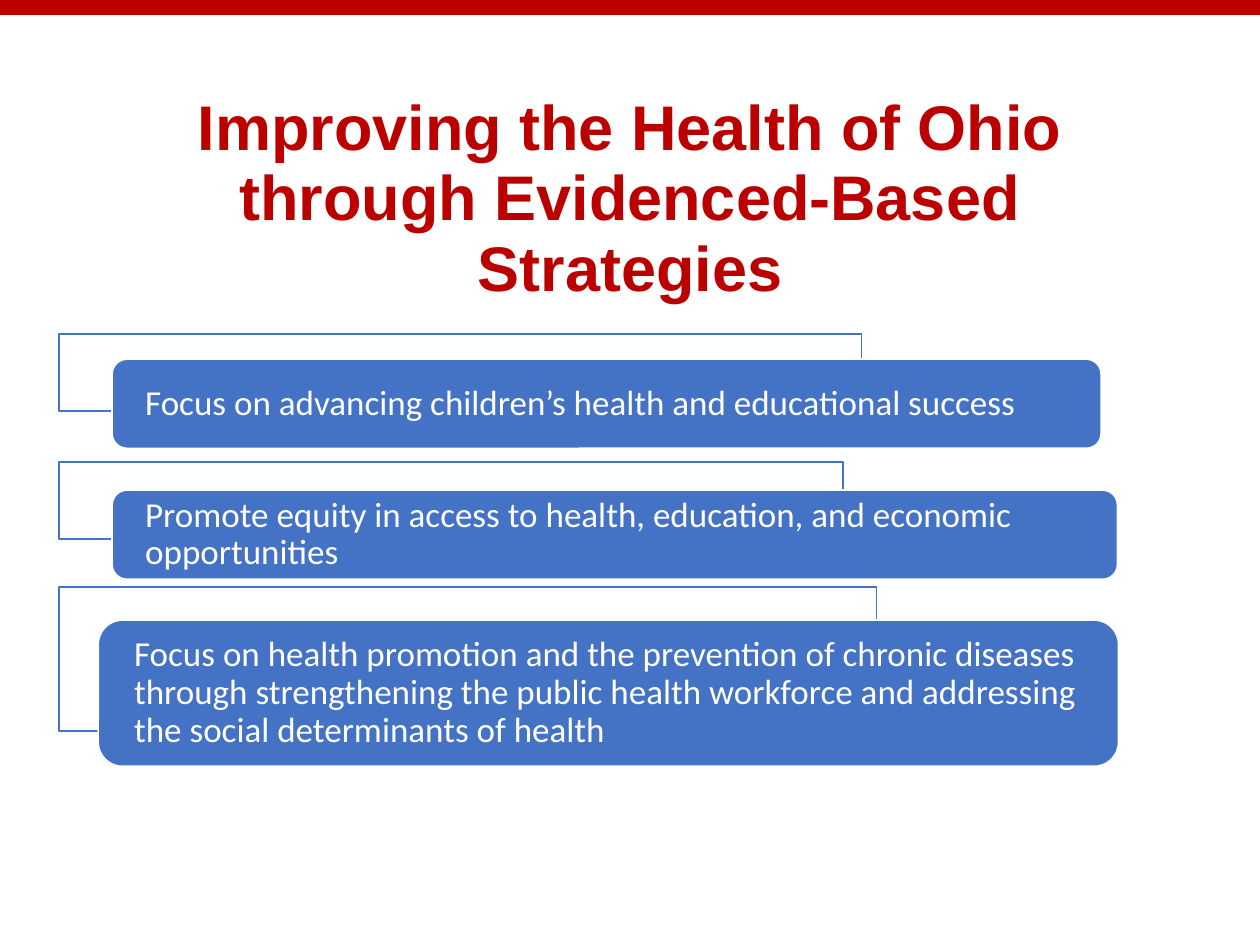
"""Build the slide on evidence-based strategies for the health of Ohio."""
from lxml import etree
from pptx import Presentation
from pptx import util as u
from pptx.dml.color import RGBColor
from pptx.enum import shapes, text
from pptx.oxml import ns

RED = RGBColor(0xBB, 0x01, 0x00)
BLUE = RGBColor(0x44, 0x72, 0xC4)
WHITE = RGBColor(0xFF, 0xFF, 0xFF)

TITLE_FORMAT = {"name": "Arial", "size": u.Pt(36), "bold": True}
CARD_FORMAT = {"name": "Calibri", "size": u.Pt(20), "bold": False}

FRAME_LEFT = 1.19
STRATEGIES = [
    ("Focus on advancing children’s health and educational success",
     (6.73, 16.18, 1.55), (2.26, 7.24, 19.94, 1.8)),
    ("Promote equity in access to health, education, and economic opportunities",
     (9.32, 15.8, 1.55), (2.26, 9.88, 20.27, 1.8)),
    ("Focus on health promotion and the prevention of chronic diseases through "
     "strengthening the public health workforce and addressing the social "
     "determinants of health",
     (11.84, 16.48, 2.9), (1.98, 12.5, 20.57, 2.95)),
]


class SlideBuilder:
    def __init__(self, page):
        self.page = page

    def bar(self, y, width, weight):
        line = self.page.shapes.add_connector(
            shapes.MSO_CONNECTOR.STRAIGHT, 0, u.Cm(y), u.Cm(width), u.Cm(y))
        line.line.color.rgb = RED
        line.line.width = u.Pt(weight)
        etree.SubElement(line._element.spPr, ns.qn("a:effectLst"))

    def add_text(self, box, words, values, color, align, spacing, **layout):
        frame = box.text_frame
        for name, value in {"word_wrap": True, **layout}.items():
            setattr(frame, name, value)
        para = frame.paragraphs[0]
        para.alignment = align
        para.line_spacing = spacing
        span = para.add_run()
        span.text = words
        for name, value in values.items():
            setattr(span.font, name, value)
        span.font.color.rgb = color

    def title(self, words, *place):
        box = self.page.shapes.add_textbox(*map(u.Cm, place))
        self.add_text(box, words, TITLE_FORMAT, RED, text.PP_ALIGN.CENTER, 0.93,
                      vertical_anchor=text.MSO_ANCHOR.TOP, margin_top=u.Cm(0.22))

    def block(self, kind, place, fill, line):
        box = self.page.shapes.add_shape(kind, *map(u.Cm, place))
        box.shadow.inherit = False
        box.fill.solid()
        box.fill.fore_color.rgb = fill
        box.line.color.rgb = line
        box.line.width = u.Pt(1)
        return box

    def frame(self, *place):
        box = self.block(shapes.MSO_SHAPE.RECTANGLE, place, WHITE, BLUE)
        color = box._element.spPr.find(ns.qn("a:solidFill"))[0]
        etree.SubElement(color, ns.qn("a:alpha"), val="90000")

    def card(self, words, *place):
        box = self.block(shapes.MSO_SHAPE.ROUNDED_RECTANGLE, place, BLUE, WHITE)
        self.add_text(box, words, CARD_FORMAT, WHITE, text.PP_ALIGN.LEFT, 0.9,
                      vertical_anchor=text.MSO_ANCHOR.MIDDLE,
                      margin_left=u.Cm(0.58), margin_right=u.Cm(0.58),
                      margin_top=0, margin_bottom=0)


def main():
    deck = Presentation()
    deck.slide_width, deck.slide_height = u.Cm(25.4), u.Cm(19.05)
    builder = SlideBuilder(deck.slides.add_slide(deck.slide_layouts[6]))
    builder.bar(0.15, 25.4, 9)
    builder.title("Improving the Health of Ohio through Evidenced-Based Strategies",
                  1.75, 1.68, 21.9, 2.72)
    for words, frame_place, card_place in STRATEGIES:
        builder.frame(FRAME_LEFT, *frame_place)
        builder.card(words, *card_place)
    deck.save("out.pptx")


if __name__ == "__main__":
    main()
